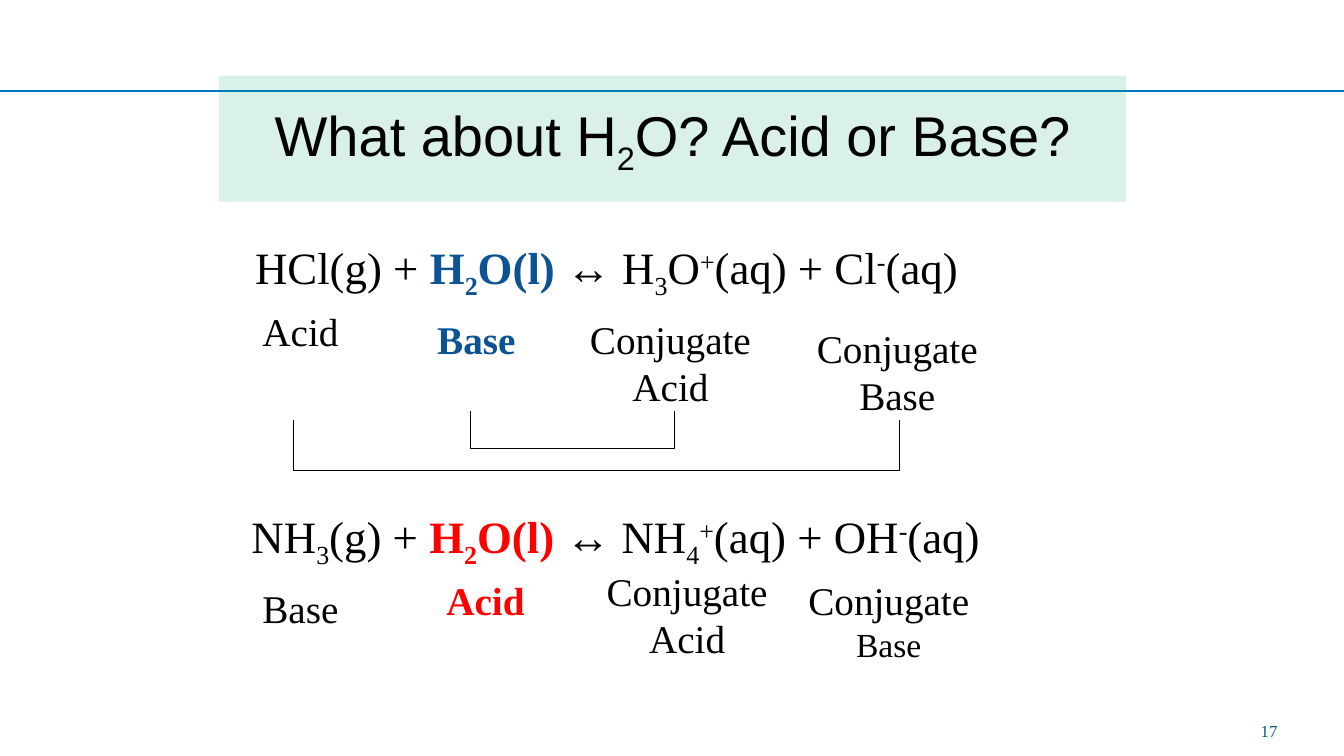
"""Build a slide on water acting as an acid or as a base."""
from lxml import etree
from pptx import Presentation
from pptx.dml.color import RGBColor
from pptx.enum.shapes import MSO_CONNECTOR, MSO_SHAPE
from pptx.enum.text import MSO_ANCHOR, MSO_AUTO_SIZE, PP_ALIGN
from pptx.oxml.ns import qn
from pptx.util import Inches, Pt

RECTANGLE = MSO_SHAPE.RECTANGLE
STRAIGHT = MSO_CONNECTOR.STRAIGHT
MIDDLE, BOTTOM = MSO_ANCHOR.MIDDLE, MSO_ANCHOR.BOTTOM
FIT_SHAPE = MSO_AUTO_SIZE.SHAPE_TO_FIT_TEXT
CENTER, RIGHT = PP_ALIGN.CENTER, PP_ALIGN.RIGHT
SERIF = "Times New Roman"
BLACK, BLUE, RED = "000000", "0B5394", "FF0000"
SUB, SUP = -25000, 30000


def color(value):
    return RGBColor.from_string(value)


def write(paragraph, runs, size, font=SERIF, align=CENTER):
    paragraph.alignment = align
    for text, baseline, hue, bold in runs:
        run = paragraph.add_run()
        run.text = text
        style = {"size": Pt(size), "name": font, "bold": bold}
        for key, value in style.items():
            setattr(run.font, key, value)
        run.font.color.rgb = color(hue)
        if baseline:
            run.font._element.set("baseline", str(baseline))


presentation = Presentation()
presentation.slide_width = Inches(13.33)
presentation.slide_height = Inches(7.5)
slide = presentation.slides.add_slide(presentation.slide_layouts[6])
shapes = slide.shapes

rule = shapes.add_connector(STRAIGHT, 0, Inches(0.9), Inches(13.33), Inches(0.9))
rule.line.color.rgb = color("0078C6")
rule.line.width = Pt(1.5)
etree.SubElement(rule._element.spPr, qn("a:effectLst"))

title = shapes.add_shape(RECTANGLE, Inches(2.17), Inches(0.75), Inches(9), Inches(1.25))
title.shadow.inherit = False
title.fill.solid()
title.fill.fore_color.rgb = color("00A260")
tint = title._element.spPr.find(qn("a:solidFill"))[0]
etree.SubElement(tint, qn("a:alpha"), val="15000")
title.line.fill.background()
title.text_frame.word_wrap = True
title.text_frame.vertical_anchor = MIDDLE
title_runs = [
    ("What about H", 0, BLACK, False),
    ("2", SUB, BLACK, False),
    ("O? Acid or Base?", 0, BLACK, False),
]
write(title.text_frame.paragraphs[0], title_runs, 40, "Arial")

page_number = shapes.add_textbox(Inches(11.56), Inches(6.95), Inches(1.11), Inches(0.4))
number_format = {
    "margin_left": 0, "margin_right": 0, "margin_top": 0, "margin_bottom": 0,
    "vertical_anchor": BOTTOM, "word_wrap": True,
}
for key, value in number_format.items():
    setattr(page_number.text_frame, key, value)
write(page_number.text_frame.paragraphs[0], [("17", 0, "045D75", False)], 12, align=RIGHT)

equations = [
    (2.38, 2.33, 7.27, BLUE, [("HCl(g) + ", 0)],
     [("↔ H", 0), ("3", SUB), ("O", 0), ("+", SUP), ("(aq) + Cl", 0)]),
    (2.33, 5, 7.55, RED, [("NH", 0), ("3", SUB), ("(g) + ", 0)],
     [("↔ NH", 0), ("4", SUB), ("+", SUP), ("(aq) + OH", 0)]),
]
water = [("H", 0), ("2", SUB), ("O(l) ", 0)]
ending = [("-", SUP), ("(aq)", 0)]
for left, top, width, water_color, reactant, products in equations:
    equation = shapes.add_textbox(Inches(left), Inches(top), Inches(width), Inches(0.64))
    equation.text_frame.word_wrap = False
    equation.text_frame.auto_size = FIT_SHAPE
    runs = [(*part, BLACK, False) for part in reactant]
    runs += [(*part, water_color, True) for part in water]
    runs += [(*part, BLACK, False) for part in products + ending]
    write(equation.text_frame.paragraphs[0], runs, 32)

roles = [
    (2.5, 3, 0.96, BLACK, [("Acid", 28)]),
    (4.23, 3.08, 0.99, BLUE, [("Base", 28)]),
    (5.75, 3.08, 1.8, BLACK, [("Conjugate", 28), ("Acid", 28)]),
    (8, 3.17, 1.8, BLACK, [("Conjugate", 28), ("Base", 28)]),
    (2.43, 5.75, 1.1, BLACK, [("Base", 28)]),
    (4.32, 5.67, 0.99, RED, [("Acid", 28)]),
    (5.91, 5.58, 1.81, BLACK, [("Conjugate", 28), ("Acid", 28)]),
    (7.91, 5.67, 1.81, BLACK, [("Conjugate", 28), ("Base", 24)]),
]
for left, top, width, hue, lines in roles:
    height = 0.1 + 0.47 * len(lines)
    role = shapes.add_textbox(Inches(left), Inches(top), Inches(width), Inches(height))
    frame = role.text_frame
    frame.word_wrap = False
    frame.auto_size = FIT_SHAPE
    for index, (text, size) in enumerate(lines):
        paragraph = frame.add_paragraph() if index else frame.paragraphs[0]
        write(paragraph, [(text, 0, hue, hue != BLACK)], size)

pair_brackets = [(4.67, 6.69, 4.08, 4.45), (2.91, 8.92, 4.17, 4.67)]
for left, right, top, bottom in pair_brackets:
    outline = shapes.build_freeform(Inches(left), Inches(top))
    corners = [(left, bottom), (right, bottom), (right, top)]
    outline.add_line_segments([(Inches(x), Inches(y)) for x, y in corners], close=False)
    bracket = outline.convert_to_shape()
    bracket.shadow.inherit = False
    bracket.fill.background()
    bracket.line.color.rgb = color(BLACK)
    bracket.line.width = Pt(0.75)

presentation.save("out.pptx")
